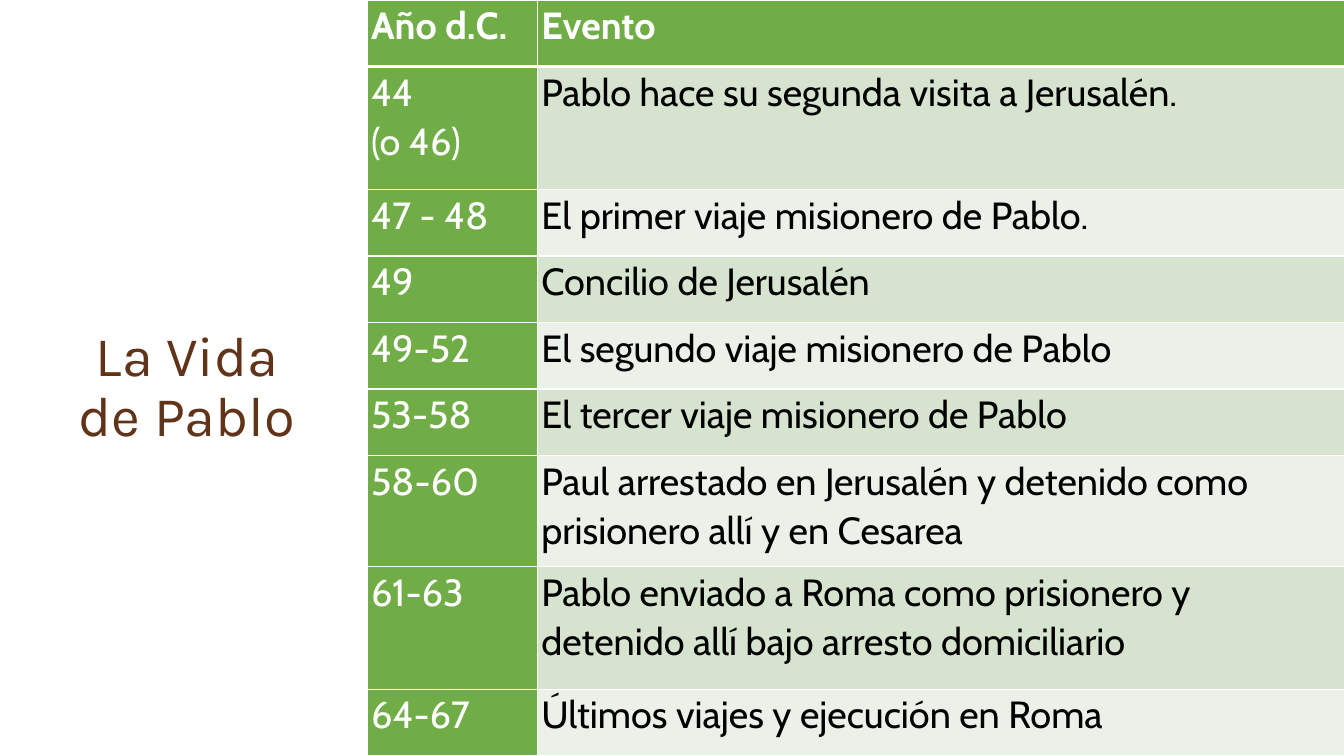
from lxml.etree import SubElement
from pptx import Presentation
from pptx.dml.color import RGBColor
from pptx.enum.text import MSO_ANCHOR, PP_ALIGN
from pptx.oxml.ns import qn
from pptx.util import Inches, Pt

GREEN, SAGE, MIST = "70AD47", "D5E3CF", "EBF1E9"
WHITE, BLACK, BROWN = "FFFFFF", "000000", "613318"

EVENTS = [
    ("Año d.C.", "Evento", 0.66),
    ("44\n(o 46)", "Pablo hace su segunda visita a Jerusalén.", 1.22),
    ("47 - 48", "El primer viaje misionero de Pablo.", 0.66),
    ("49", "Concilio de Jerusalén", 0.66),
    ("49-52", "El segundo viaje misionero de Pablo", 0.66),
    ("53-58", "El tercer viaje misionero de Pablo", 0.66),
    ("58-60", "Paul arrestado en Jerusalén y detenido como prisionero allí y en Cesarea", 1.1),
    ("61-63", "Pablo enviado a Roma como prisionero y detenido allí bajo arresto domiciliario", 1.22),
    ("64-67", "Últimos viajes y ejecución en Roma", 0.66),
]


def color(code):
    return RGBColor.from_string(code)


class TimelineSlide:
    """Holds the slide and its text and table style."""

    def __init__(self, slide):
        self.slide = slide
        self.title_font, self.body_font = "Karla", "Cabin"

    def style(self, frame, font, size, ink, spacing, bold=False, align=None):
        for paragraph in frame.paragraphs:
            paragraph.line_spacing = spacing
            paragraph.alignment = align
            for run in paragraph.runs:
                run.font.name = font
                run.font.size = Pt(size)
                run.font.bold = bold
                run.font.color.rgb = color(ink)

    def title(self, text, left, top, width, height):
        frame = self.slide.shapes.add_textbox(
            Inches(left), Inches(top), Inches(width), Inches(height)).text_frame
        frame.word_wrap = True
        frame.vertical_anchor = MSO_ANCHOR.BOTTOM
        frame.text = text
        self.style(frame, self.title_font, 40, BROWN, 0.9, align=PP_ALIGN.CENTER)

    def borders(self, cell, widths):
        properties = cell._tc.get_or_add_tcPr()
        for position, (side, width) in enumerate(widths.items()):
            line = properties.makeelement(qn(f"a:{side}"), {"w": str(Pt(width))})
            fill = SubElement(line, qn("a:solidFill"))
            SubElement(fill, qn("a:srgbClr"), val=WHITE)
            properties.insert(position, line)

    def cell(self, cell, text, fill, ink, header, below_header):
        cell.margin_left = cell.margin_right = Inches(0.04)
        cell.margin_top = cell.margin_bottom = 0
        cell.text_frame.text = text
        self.style(cell.text_frame, self.body_font, 27, ink, 1.07, bold=header)
        cell.fill.solid()
        cell.fill.fore_color.rgb = color(fill)
        self.borders(cell, {"lnL": 1, "lnR": 1,
                            "lnT": 3 if below_header else 1,
                            "lnB": 3 if header else 1})

    def timeline(self, events, left, top, widths):
        heights = [height for _, _, height in events]
        table = self.slide.shapes.add_table(
            len(events), len(widths), Inches(left), Inches(top),
            Inches(sum(widths)), Inches(sum(heights))).table
        for column, width in zip(table.columns, widths):
            column.width = Inches(width)
        for index, (year, event, height) in enumerate(events):
            table.rows[index].height = Inches(height)
            header = index == 0
            band = GREEN if header else SAGE if index % 2 else MIST
            ink = WHITE if header else BLACK
            self.cell(table.cell(index, 0), year, GREEN, WHITE, header, index == 1)
            self.cell(table.cell(index, 1), event, band, ink, header, index == 1)


def main():
    presentation = Presentation()
    presentation.slide_width = Inches(13.33)
    presentation.slide_height = Inches(7.5)
    page = TimelineSlide(presentation.slides.add_slide(presentation.slide_layouts[6]))
    page.title("La Vida de Pablo", 0.5, 2.99, 2.71, 1.51)
    page.timeline(EVENTS, 3.64, 0, (1.69, 8.01))
    presentation.save("out.pptx")


if __name__ == "__main__":
    main()
